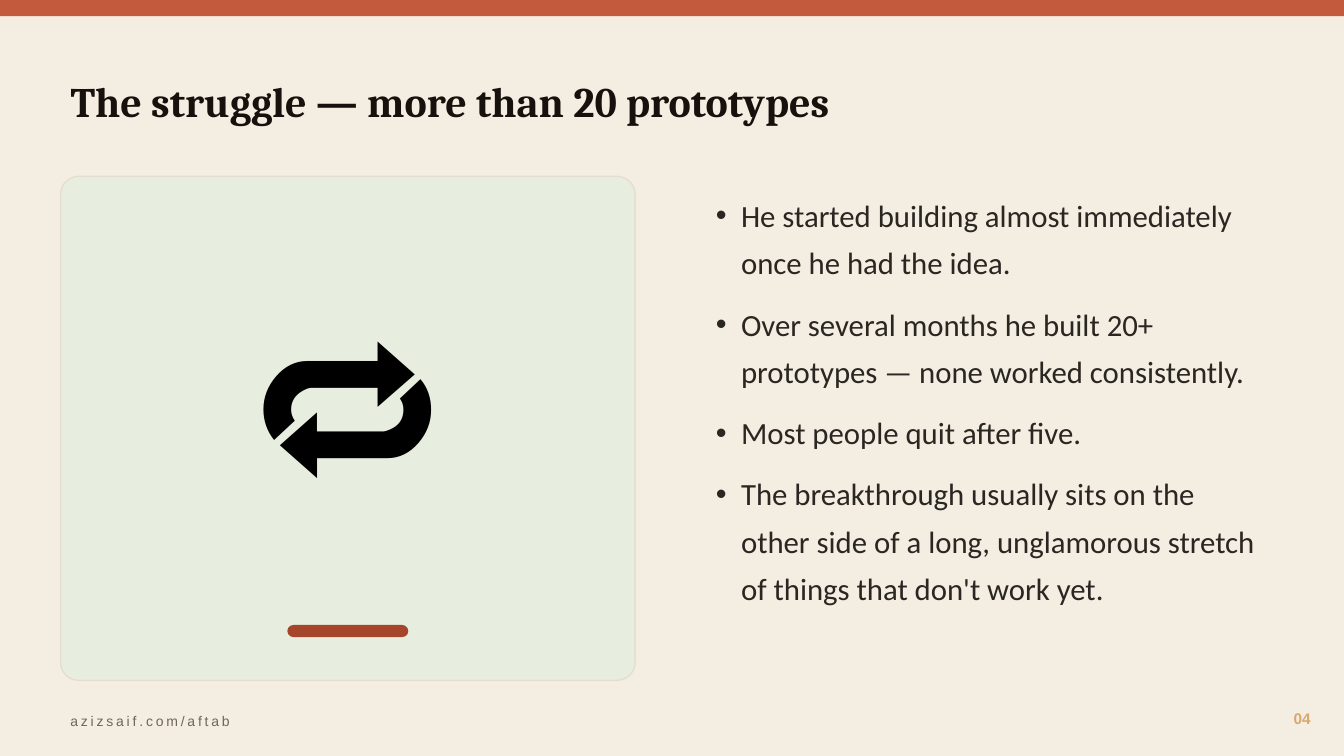
from pptx import Presentation, util as u
from pptx.dml.color import RGBColor
from pptx.enum import shapes, text

CREAM = RGBColor(0xF4, 0xED, 0xE2)
TERRACOTTA = RGBColor(0xC4, 0x5A, 0x3D)
RUST = RGBColor(0xA4, 0x45, 0x2C)
SAGE = RGBColor(0xE8, 0xEE, 0xDF)
BORDER = RGBColor(0xE4, 0xDD, 0xD0)
INK = RGBColor(0x16, 0x11, 0x0D)
CHARCOAL = RGBColor(0x2A, 0x26, 0x22)
BLACK = RGBColor(0, 0, 0)
SAND = RGBColor(0xD9, 0xA8, 0x6C)
TAUPE = RGBColor(0x6E, 0x66, 0x5C)

WIDTH, HEIGHT = 13.33, 7.5
MARGIN, COLUMN, GUTTER = 0.6, 5.7, 0.7
RIGHT_COLUMN = MARGIN + COLUMN + GUTTER
CARD_TOP, CARD_HEIGHT = 1.75, 5
ACCENT_WIDTH = 1.2

deck = Presentation()
deck.slide_width, deck.slide_height = u.Inches(WIDTH), u.Inches(HEIGHT)
slide = deck.slides.add_slide(deck.slide_layouts[1])
slide.background.fill.solid()
slide.background.fill.fore_color.rgb = CREAM


def block(preset, box, color, radius=None, border=None):
    part = slide.shapes.add_shape(preset, *map(u.Inches, box))
    part.shadow.inherit = False
    part.fill.solid()
    part.fill.fore_color.rgb = color
    if radius is not None:
        part.adjustments[0] = radius
    if border is None:
        part.line.fill.background()
    else:
        part.line.color.rgb = border
        part.line.width = u.Pt(1)


def write(part, box, lines, color, style, align=text.PP_ALIGN.LEFT,
          anchor=text.MSO_ANCHOR.MIDDLE):
    part.left, part.top, part.width, part.height = map(u.Inches, box)
    frame = part.text_frame
    frame.word_wrap = True
    frame.auto_size = text.MSO_AUTO_SIZE.NONE
    frame.vertical_anchor = anchor
    frame.text = "\n".join(lines)
    for paragraph in frame.paragraphs:
        paragraph.alignment = align
        for run in paragraph.runs:
            run.font.color.rgb = color
            for key, value in style.items():
                setattr(run.font, key, value)
    return frame.paragraphs


rounded = shapes.MSO_SHAPE.ROUNDED_RECTANGLE
block(shapes.MSO_SHAPE.RECTANGLE, (0, 0, WIDTH, 0.16), TERRACOTTA)
block(rounded, (MARGIN, CARD_TOP, COLUMN, CARD_HEIGHT), SAGE, 0.036, BORDER)
block(rounded, (MARGIN + (COLUMN - ACCENT_WIDTH) / 2, 6.2, ACCENT_WIDTH, 0.12), RUST, 0.5)

write(slide.shapes.title, (MARGIN, 0.5, 2 * COLUMN + GUTTER, 1),
      ["The struggle — more than 20 prototypes"], INK,
      {"name": "Cambria", "size": u.Pt(30), "bold": True})

lessons = [
    "He started building almost immediately once he had the idea.",
    "Over several months he built 20+ prototypes — none worked consistently.",
    "Most people quit after five.",
    "The breakthrough usually sits on the other side of a long, unglamorous "
    "stretch of things that don't work yet.",
]
bullets = write(slide.placeholders[1], (RIGHT_COLUMN, 1.8, COLUMN, CARD_HEIGHT),
                lessons, CHARCOAL, {"name": "Calibri", "size": u.Pt(22)},
                anchor=text.MSO_ANCHOR.TOP)
spacing = {"line_spacing": 1.28, "space_before": u.Pt(0), "space_after": u.Pt(10)}
indent = u.Inches(0.25)
for bullet in bullets:
    for key, value in spacing.items():
        setattr(bullet, key, value)
    properties = bullet._p.get_or_add_pPr()
    properties.set("marL", str(indent))
    properties.set("indent", str(-indent))

labels = [
    ("🔁", (MARGIN, CARD_TOP, COLUMN, 4.1), BLACK,
     {"name": "Calibri", "size": u.Pt(150)}, text.PP_ALIGN.CENTER, 0),
    ("04", (12.2, 6.95, 0.9, 0.35), SAND,
     {"name": "Arial", "size": u.Pt(11), "bold": True}, text.PP_ALIGN.RIGHT, 0),
    ("azizsaif.com/aftab", (MARGIN, 7, 8, 0.3), TAUPE,
     {"name": "Arial", "size": u.Pt(10)}, text.PP_ALIGN.LEFT, 2),
]
for wording, box, color, style, align, tracking in labels:
    label = slide.shapes.add_textbox(0, 0, 0, 0)
    paragraphs = write(label, box, [wording], color, style, align)
    if tracking:
        paragraphs[0].runs[0]._r.get_or_add_rPr().set("spc", str(tracking * 100))

deck.save("out.pptx")
